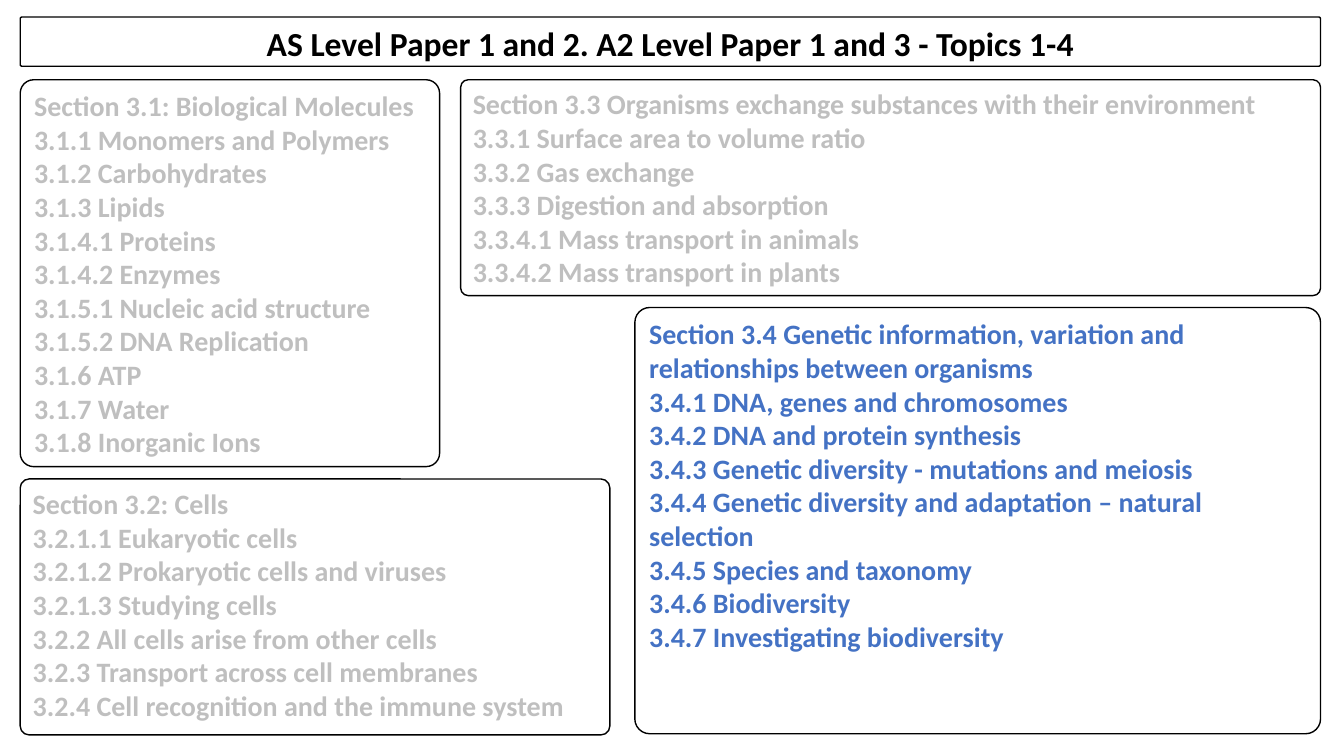
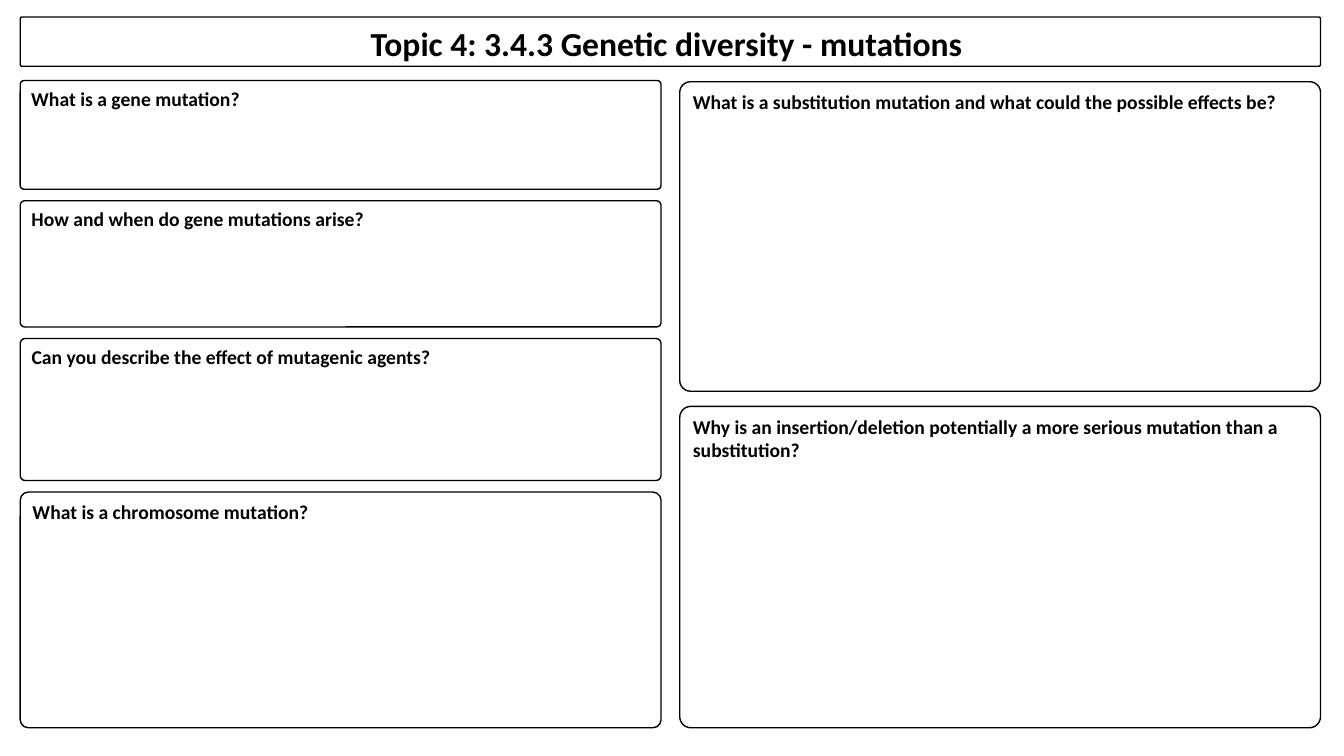
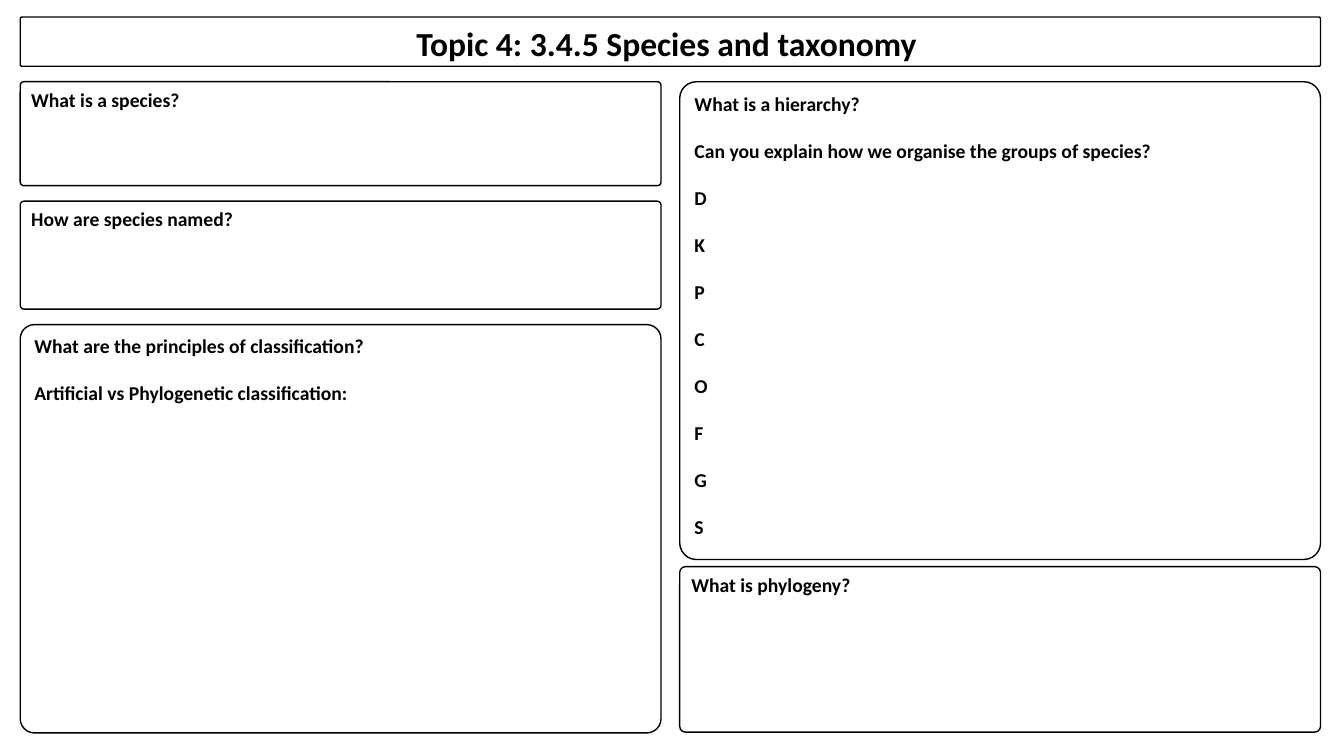
from pptx import Presentation as Deck
from pptx.dml.color import RGBColor as Rgb
from pptx.enum.shapes import MSO_SHAPE as Form
from pptx.enum.text import MSO_ANCHOR as Anchor, PP_ALIGN as Align
from pptx.util import Cm, Pt

HUES = {"ink": "000000", "faded": "BFBFBF", "focus": "4472C4"}
FONT = "Calibri"
LEFT, RIGHT = 0.51, 33.28
HALF = 16.15
MID = RIGHT - HALF

TOPICS = [
    ((LEFT, 2.01, 10.57, 9.75), "faded", [
        "Section 3.1: Biological Molecules",
        "3.1.1 Monomers and Polymers",
        "3.1.2 Carbohydrates",
        "3.1.3 Lipids",
        "3.1.4.1 Proteins",
        "3.1.4.2 Enzymes",
        "3.1.5.1 Nucleic acid structure",
        "3.1.5.2 DNA Replication",
        "3.1.6 ATP",
        "3.1.7 Water",
        "3.1.8 Inorganic Ions",
    ]),
    ((LEFT, 12.07, 14.86, 6.45), "faded", [
        "Section 3.2: Cells",
        "3.2.1.1 Eukaryotic cells",
        "3.2.1.2 Prokaryotic cells and viruses",
        "3.2.1.3 Studying cells",
        "3.2.2 All cells arise from other cells",
        "3.2.3 Transport across cell membranes",
        "3.2.4 Cell recognition and the immune system",
    ]),
    ((11.61, 2.01, RIGHT - 11.61, 5.44), "faded", [
        "Section 3.3 Organisms exchange substances with their environment",
        "3.3.1 Surface area to volume ratio",
        "3.3.2 Gas exchange",
        "3.3.3 Digestion and absorption",
        "3.3.4.1 Mass transport in animals",
        "3.3.4.2 Mass transport in plants",
    ]),
    ((16, 7.75, RIGHT - 16, 10.74), "focus", [
        "Section 3.4 Genetic information, variation and relationships between organisms",
        "3.4.1 DNA, genes and chromosomes",
        "3.4.2 DNA and protein synthesis",
        "3.4.3 Genetic diversity - mutations and meiosis",
        "3.4.4 Genetic diversity and adaptation – natural selection",
        "3.4.5 Species and taxonomy",
        "3.4.6 Biodiversity",
        "3.4.7 Investigating biodiversity",
    ]),
]


def panel(page, box, lines, size=14, hue="ink", align=Align.LEFT, space=0):
    shape = page.shapes.add_shape(Form.ROUNDED_RECTANGLE, *map(Cm, box))
    shape.adjustments[0] = 0.035
    shape.shadow.inherit = False
    shape.fill.background()
    shape.line.color.rgb = Rgb.from_string(HUES["ink"])
    shape.line.width = Pt(1)
    frame = shape.text_frame
    frame.word_wrap = True
    frame.vertical_anchor = Anchor.TOP
    frame.text = "\n".join(lines)
    for index, para in enumerate(frame.paragraphs):
        para.alignment = align
        if index and space:
            para.space_before = Pt(space)
        for run in para.runs:
            font = run.font
            font.name, font.size, font.bold = FONT, Pt(size), True
            font.color.rgb = Rgb.from_string(HUES[hue])


def sheet(deck, title):
    page = deck.slides.add_slide(deck.slide_layouts[6])
    panel(page, (LEFT, 0.43, RIGHT - LEFT, 1.24), [title], 24, align=Align.CENTER)
    return page


def stack(page, left, top, gap, items):
    for height, *lines in items:
        panel(page, (left, top, HALF, height), lines, space=16.8)
        top += height + gap


def main():
    deck = Deck()
    deck.slide_width, deck.slide_height = Cm(33.87), Cm(19.05)

    page = sheet(deck, "AS Level Paper 1 and 2. A2 Level Paper 1 and 3 - Topics 1-4")
    for box, hue, lines in TOPICS:
        panel(page, box, lines, 20, hue)

    page = sheet(deck, "Topic 4: 3.4.3 Genetic diversity - mutations ")
    stack(page, LEFT, 2.03, 0.29, [
        (2.74, "What is a gene mutation?"),
        (3.18, "How and when do gene mutations arise?"),
        (3.58, "Can you describe the effect of mutagenic agents?"),
        (5.94, "What is a chromosome mutation?"),
    ])
    stack(page, MID, 2.06, 0.38, [
        (7.8, "What is a substitution mutation and what could the possible effects be?"),
        (8.1, "Why is an insertion/deletion potentially a more serious mutation than a substitution?"),
    ])

    page = sheet(deck, "Topic 4: 3.4.5 Species and taxonomy ")
    stack(page, LEFT, 2.06, 0.39, [
        (2.62, "What is a species?"),
        (2.72, "How are species named?"),
        (10.29, "What are the principles of classification?",
         "Artificial vs Phylogenetic classification:"),
    ])
    stack(page, MID, 2.06, 0.18, [
        (12.04, "What is a hierarchy?",
         "Can you explain how we organise the groups of species?", *"DKPCOFGS"),
        (4.17, "What is phylogeny?"),
    ])

    deck.save("out.pptx")


if __name__ == "__main__":
    main()
